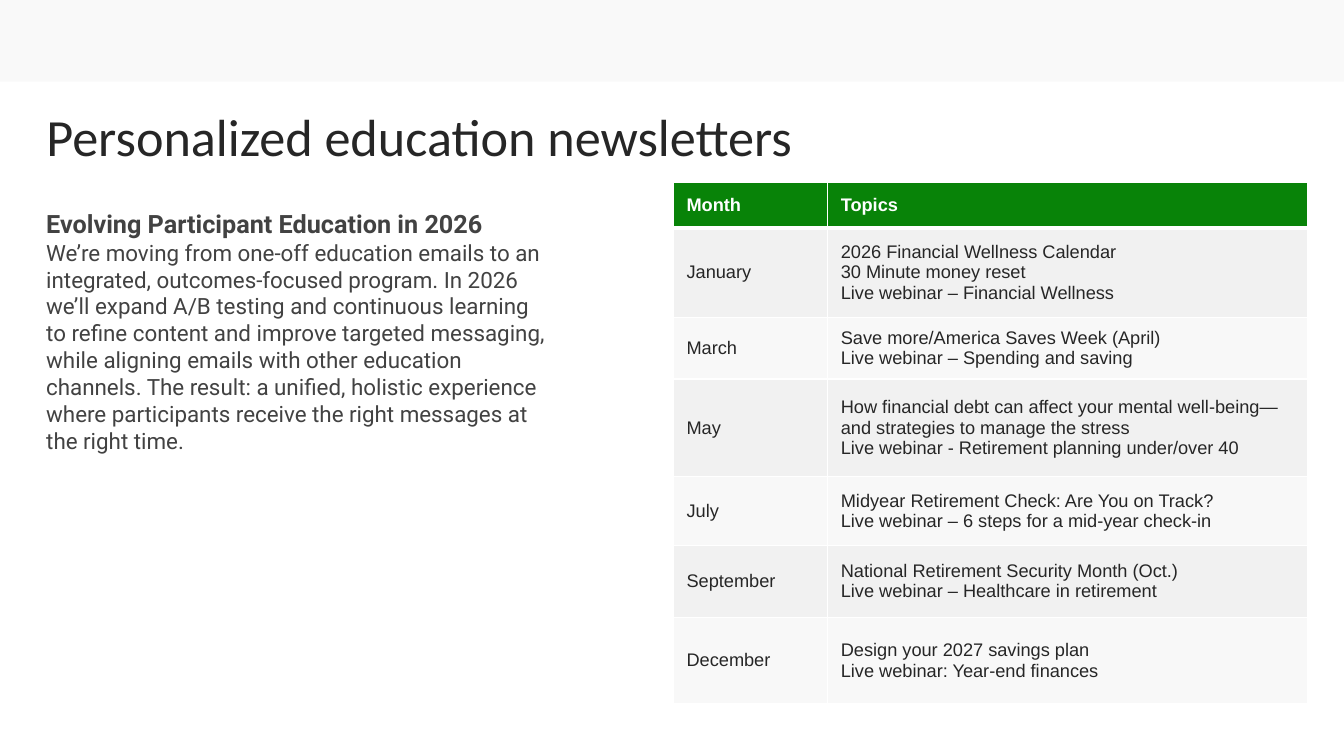
from lxml.etree import SubElement
from pptx import Presentation
from pptx.dml.color import RGBColor
from pptx.enum.shapes import MSO_SHAPE
from pptx.enum.text import MSO_ANCHOR, PP_ALIGN
from pptx.oxml.ns import qn
from pptx.util import Inches, Pt

COLORS = {
    "band": "F9F9F9", "ink": "262626", "body": "424242", "white": "FFFFFF",
    "header_text": "FEFFFF", "header": "088308", "odd": "F1F1F1", "even": "F8F8F8",
}
TOPICS = [
    ("Month", ["Topics"], 0.45),
    ("January", ["2026 Financial Wellness Calendar", "30 Minute money reset",
                 "Live webinar – Financial Wellness"], 0.89),
    ("March", ["Save more/America Saves Week (April)",
               "Live webinar – Spending and saving"], 0.61),
    ("May", ["How financial debt can affect your mental well-being—"
             "and strategies to manage the stress",
             "Live webinar - Retirement planning under/over 40"], 0.97),
    ("July", ["Midyear Retirement Check: Are You on Track?",
              "Live webinar – 6 steps for a mid-year check-in"], 0.68),
    ("September", ["National Retirement Security Month (Oct.)",
                   "Live webinar – Healthcare in retirement"], 0.72),
    ("December", ["Design your 2027 savings plan",
                  "Live webinar: Year-end finances"], 0.85),
]
HEADING = "Evolving Participant Education in 2026"
BODY = (
    "We’re moving from one‑off education emails to an integrated, outcomes‑focused "
    "program. In 2026 we’ll expand A/B testing and continuous learning to refine "
    "content and improve targeted messaging, while aligning emails with other "
    "education channels. The result: a unified, holistic experience where "
    "participants receive the right messages at the right time."
)


def style(font, name, size, color, bold=False):
    for key, value in {"name": name, "size": Pt(size), "bold": bold}.items():
        setattr(font, key, value)
    font.color.rgb = RGBColor.from_string(COLORS[color])


def add_borders(cell, bottom):
    """Draw white cell edges, 1 pt except for the given bottom width."""
    tcPr = cell._tc.get_or_add_tcPr()
    widths = {"a:lnL": 1, "a:lnR": 1, "a:lnT": 1, "a:lnB": bottom}
    for i, (tag, width) in enumerate(widths.items()):
        ln = tcPr.makeelement(qn(tag), {"w": str(Pt(width))})
        fill = SubElement(ln, qn("a:solidFill"))
        SubElement(fill, qn("a:srgbClr"), val=COLORS["white"])
        tcPr.insert(i, ln)


prs = Presentation()
prs.slide_width, prs.slide_height = Inches(13.33), Inches(7.5)
s = prs.slides.add_slide(prs.slide_layouts[5])

# Top band, behind the title
band = s.shapes.add_shape(MSO_SHAPE.RECTANGLE, 0, 0, prs.slide_width, Inches(0.81))
band.shadow.inherit = False
band.fill.solid()
band.fill.fore_color.rgb = RGBColor.from_string(COLORS["band"])
band.line.fill.background()
s.shapes._spTree.insert(2, band._element)

# Title
title = s.shapes.title
title.left, title.top = Inches(0.36), Inches(1.04)
title.width, title.height = Inches(10.63), Inches(0.69)
title.text_frame.text = "Personalized education newsletters"
title.text_frame.vertical_anchor = MSO_ANCHOR.MIDDLE
p = title.text_frame.paragraphs[0]
p.alignment = PP_ALIGN.LEFT
p.line_spacing = 0.9
style(p.runs[0].font, "Calibri", 37.3, "ink")

# Introduction
intro = s.shapes.add_textbox(Inches(0.36), Inches(2.02), Inches(5.18), Inches(2.56))
intro.text_frame.word_wrap = True
p = intro.text_frame.paragraphs[0]
r = p.add_run()
r.text = HEADING
style(r.font, "Roboto", 18, "body", True)
p.add_line_break()
r = p.add_run()
r.text = BODY
style(r.font, "Roboto", 16, "body")

# Newsletter calendar
table = s.shapes.add_table(len(TOPICS), 2, Inches(6.68), Inches(1.81),
                           Inches(6.29), Inches(5.17)).table
for column, width in zip(table.columns, (1.53, 4.76)):
    column.width = Inches(width)

for i, (month, topics, height) in enumerate(TOPICS):
    table.rows[i].height = Inches(height)
    is_header = i == 0
    fill = "header" if is_header else "odd" if i % 2 else "even"
    for cell, lines in zip(table.rows[i].cells, ([month], topics)):
        cell.fill.solid()
        cell.fill.fore_color.rgb = RGBColor.from_string(COLORS[fill])
        cell.vertical_anchor = MSO_ANCHOR.MIDDLE
        cell.margin_left = cell.margin_right = Inches(0.13)
        cell.margin_top = cell.margin_bottom = Inches(0.07)
        add_borders(cell, 3 if is_header else 1)
        cell.text_frame.text = "\n".join(lines)
        for p in cell.text_frame.paragraphs:
            style(p.runs[0].font, "Arial", 13,
                  "header_text" if is_header else "ink", is_header)

prs.save("out.pptx")
